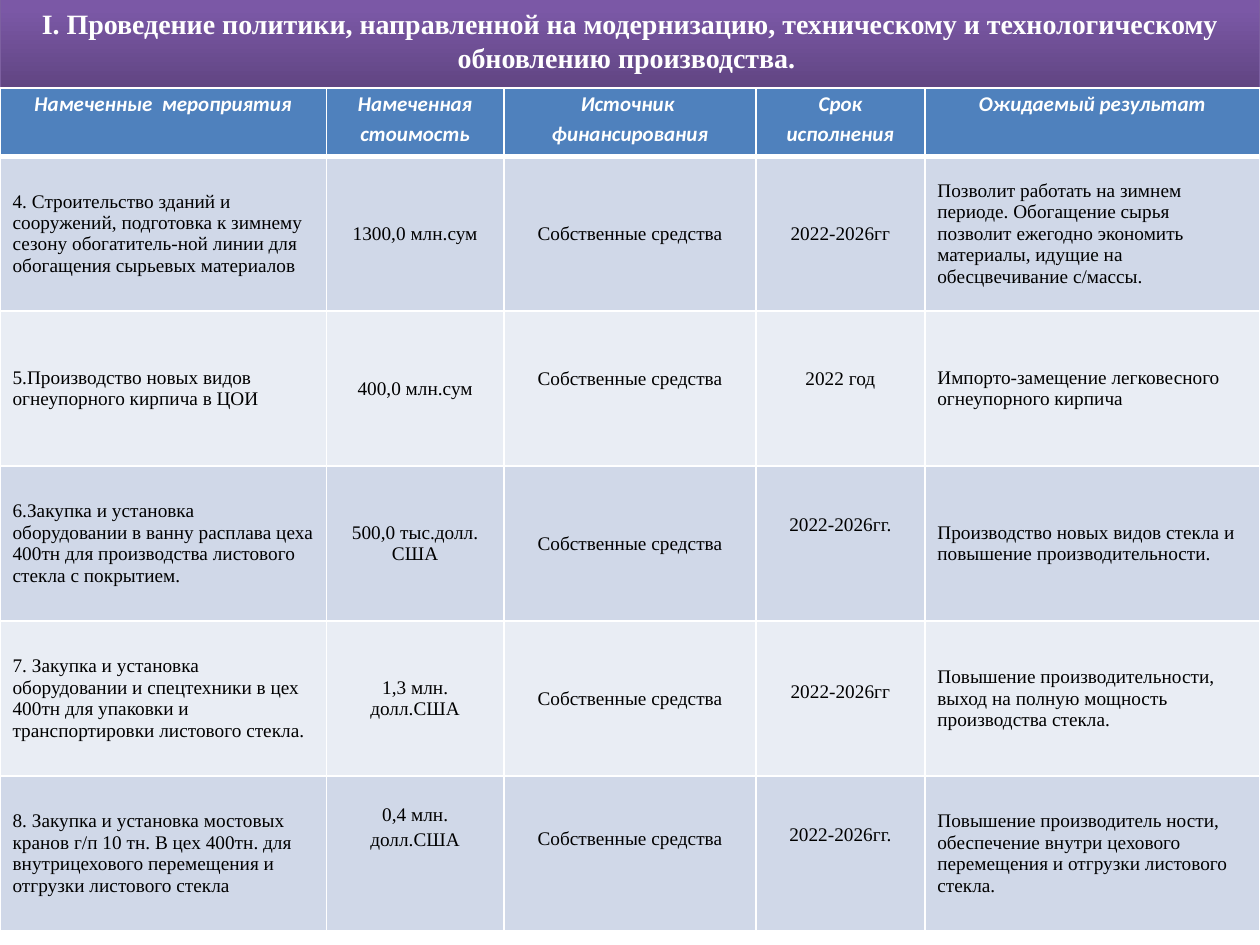
"""Build a slide with a banner title and a table of planned modernization measures."""
import lxml.etree
import pptx
import pptx.dml.color
import pptx.enum.text
import pptx.oxml
import pptx.oxml.ns
import pptx.util

Inches = pptx.util.Inches
Pt = pptx.util.Pt
Color = pptx.dml.color.RGBColor
Align = pptx.enum.text.PP_ALIGN
Anchor = pptx.enum.text.MSO_ANCHOR

WHITE = Color(0xFF, 0xFF, 0xFF)
BLACK = Color(0x00, 0x00, 0x00)
DARK = Color(0x5F, 0x44, 0x80)
LIGHT = Color(0x7B, 0x58, 0xA6)
EDGE = Color(0x7D, 0x60, 0xA0)
BLUE = Color(0x4F, 0x81, 0xBD)
BANDS = [Color(0xD0, 0xD8, 0xE8), Color(0xE9, 0xED, 0xF4)]
SERIF = "Times New Roman"
OWN = "Собственные средства"

HEADS = ["Намеченные  мероприятия", "Намеченная\nстоимость", "Источник  финансирования",
         "Срок исполнения", "Ожидаемый результат"]
ROWS = [
    ["4. Строительство зданий и сооружений, подготовка к зимнему сезону обогатитель-ной линии "
     "для обогащения сырьевых материалов",
     "1300,0 млн.сум", OWN, "2022-2026гг",
     "Позволит работать на зимнем периоде. Обогащение сырья позволит ежегодно экономить "
     "материалы, идущие на обесцвечивание с/массы."],
    ["5.Производство новых видов огнеупорного кирпича в ЦОИ",
     "400,0 млн.сум", OWN, "2022 год",
     "Импорто-замещение легковесного огнеупорного кирпича"],
    ["6.Закупка и установка оборудовании в ванну расплава цеха 400тн для производства "
     "листового стекла с покрытием.",
     "500,0 тыс.долл. США", OWN, "2022-2026гг.",
     "Производство новых видов стекла и повышение производительности."],
    ["7. Закупка и установка оборудовании и спецтехники в цех 400тн для упаковки и "
     "транспортировки листового стекла.",
     "1,3 млн. долл.США", OWN, "2022-2026гг",
     "Повышение производительности, выход на полную мощность производства стекла."],
    ["8. Закупка и установка мостовых кранов г/п 10 тн. В цех 400тн. для внутрицехового "
     "перемещения и отгрузки листового стекла",
     "0,4 млн. долл.США", OWN, "2022-2026гг.",
     "Повышение производитель ности, обеспечение внутри цехового перемещения и отгрузки "
     "листового стекла."],
]
TOPS = {(3, 3): 0.36, (4, 3): 0.45, (5, 1): 0.2, (5, 2): 0.39, (5, 3): 0.36}
LIFTS = {(2, 2): 0.21, (2, 3): 0.21}


def write(frame, text, font, size, color, bold=True, slant=False, align=Align.CENTER, space=1):
    for i, line in enumerate(text.split("\n")):
        para = frame.add_paragraph() if i else frame.paragraphs[0]
        para.alignment = align
        para.line_spacing = space
        run = para.add_run()
        run.text = line
        run.font.name = font
        run.font.size = Pt(size)
        run.font.color.rgb = color
        run.font.bold = bold
        run.font.italic = slant


def frame_cell(cell, row):
    props = cell._tc.get_or_add_tcPr()
    for i, side in enumerate(["lnL", "lnR", "lnT", "lnB"]):
        thick = (row, side) in [(0, "lnB"), (1, "lnT")]
        line = pptx.oxml.parse_xml(
            f'<a:{side} {pptx.oxml.ns.nsdecls("a")} w="{Pt(3 if thick else 1)}">'
            f'<a:solidFill><a:srgbClr val="{WHITE}"/></a:solidFill></a:{side}>')
        props.insert(i, line)


deck = pptx.Presentation()
deck.slide_width = Inches(10)
deck.slide_height = Inches(7.5)
slide = deck.slides.add_slide(deck.slide_layouts[5])

title = slide.shapes.title
title.left, title.top, title.width, title.height = Inches(0), Inches(0), Inches(10), Inches(0.64)
title.fill.gradient()
title.fill.gradient_angle = 90
for stop, color, place in zip(title.fill.gradient_stops, [DARK, LIGHT], [0, 0.8]):
    stop.color.rgb = color
    stop.position = place
title.line.color.rgb = EDGE
title.line.width = Pt(0.75)
title._element.spPr.append(pptx.oxml.parse_xml(
    f'<a:effectLst {pptx.oxml.ns.nsdecls("a")}>'
    f'<a:outerShdw blurRad="{Pt(3.1)}" dist="{Pt(1.8)}" dir="5400000" rotWithShape="0">'
    '<a:srgbClr val="000000"><a:alpha val="35000"/></a:srgbClr></a:outerShdw></a:effectLst>'))
title.text_frame.word_wrap = True
title.text_frame.auto_size = pptx.enum.text.MSO_AUTO_SIZE.SHAPE_TO_FIT_TEXT
write(title.text_frame, "I. Проведение политики, направленной на модернизацию, техническому и "
      "технологическому обновлению производства. ", SERIF, 16, WHITE)

grid = slide.shapes.add_table(6, 5, Inches(0), Inches(0.7), Inches(10), Inches(6.69)).table
for col, width in zip(grid.columns, [2.59, 1.41, 2, 1.34, 2.66]):
    col.width = Inches(width)
for r, texts in enumerate([HEADS] + ROWS):
    grid.rows[r].height = Inches(1.23 if r else 0.54)
    for c, text in enumerate(texts):
        cell = grid.cell(r, c)
        cell.fill.solid()
        cell.fill.fore_color.rgb = BANDS[(r - 1) % 2] if r else BLUE
        frame_cell(cell, r)
        fixed = r == 0 or (r, c) in TOPS
        cell.vertical_anchor = Anchor.TOP if fixed else Anchor.MIDDLE
        if fixed:
            cell.margin_left = cell.margin_right = Inches(0.07)
            cell.margin_top = Inches(TOPS.get((r, c), 0))
            cell.margin_bottom = Inches(0)
        else:
            cell.margin_bottom = Inches(LIFTS.get((r, c), 0.05))
        space = 1.15 if fixed else 1
        if r == 0:
            write(cell.text_frame, text, "Calibri", 12, WHITE, slant=True, space=space)
        else:
            align = Align.LEFT if c in (0, 4) else Align.CENTER
            write(cell.text_frame, text, SERIF, 11, BLACK, bold=False, align=align, space=space)

deck.save("out.pptx")
